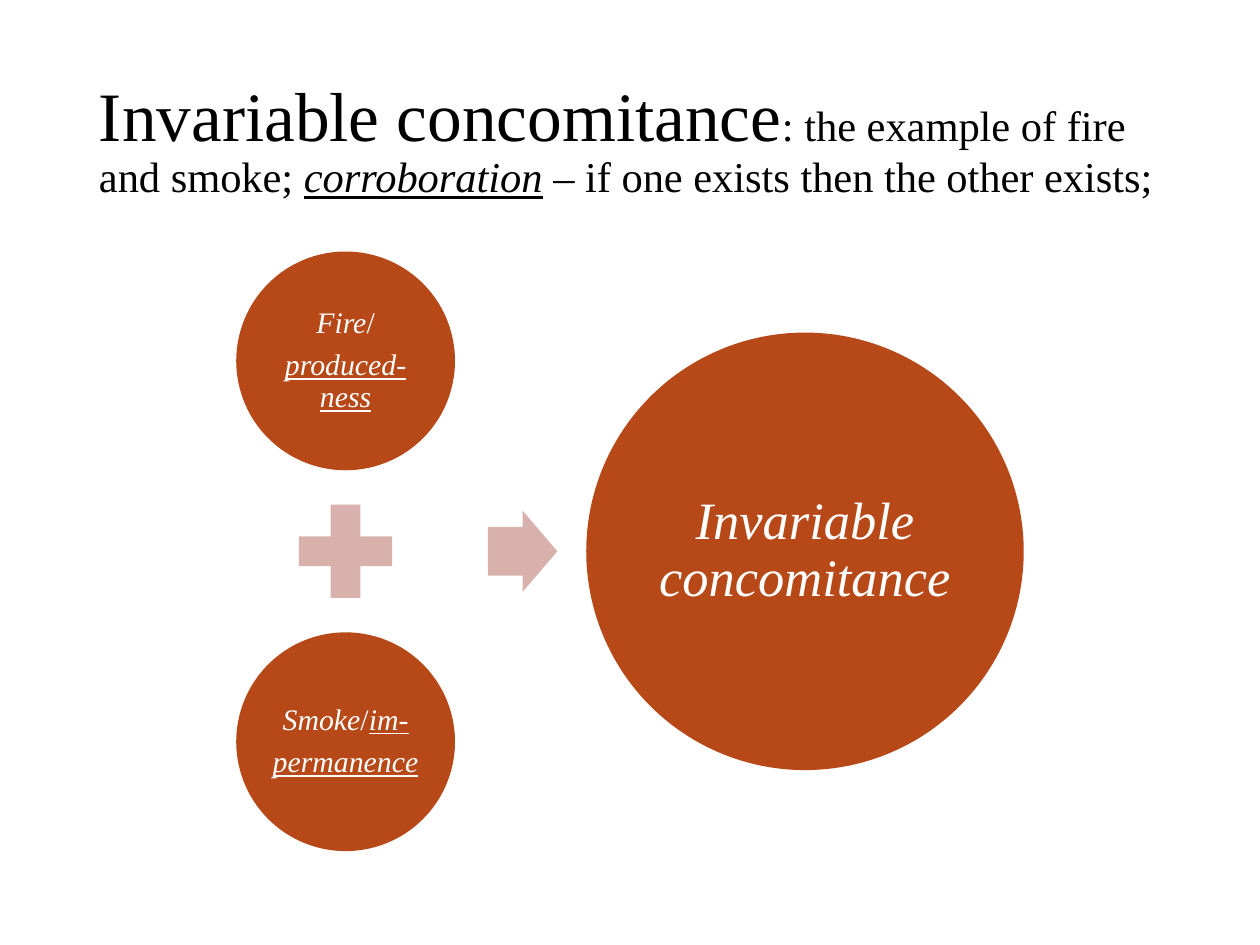
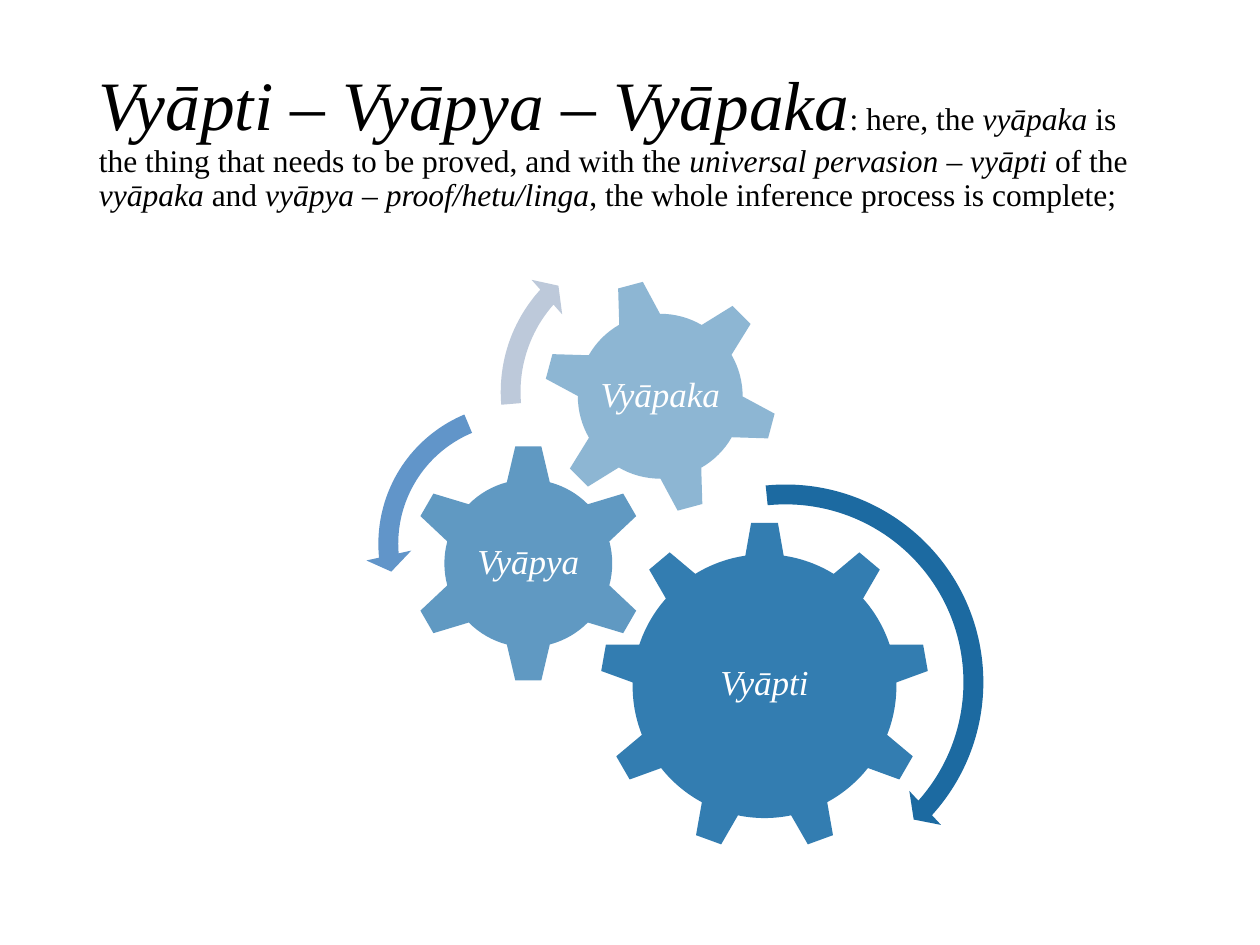
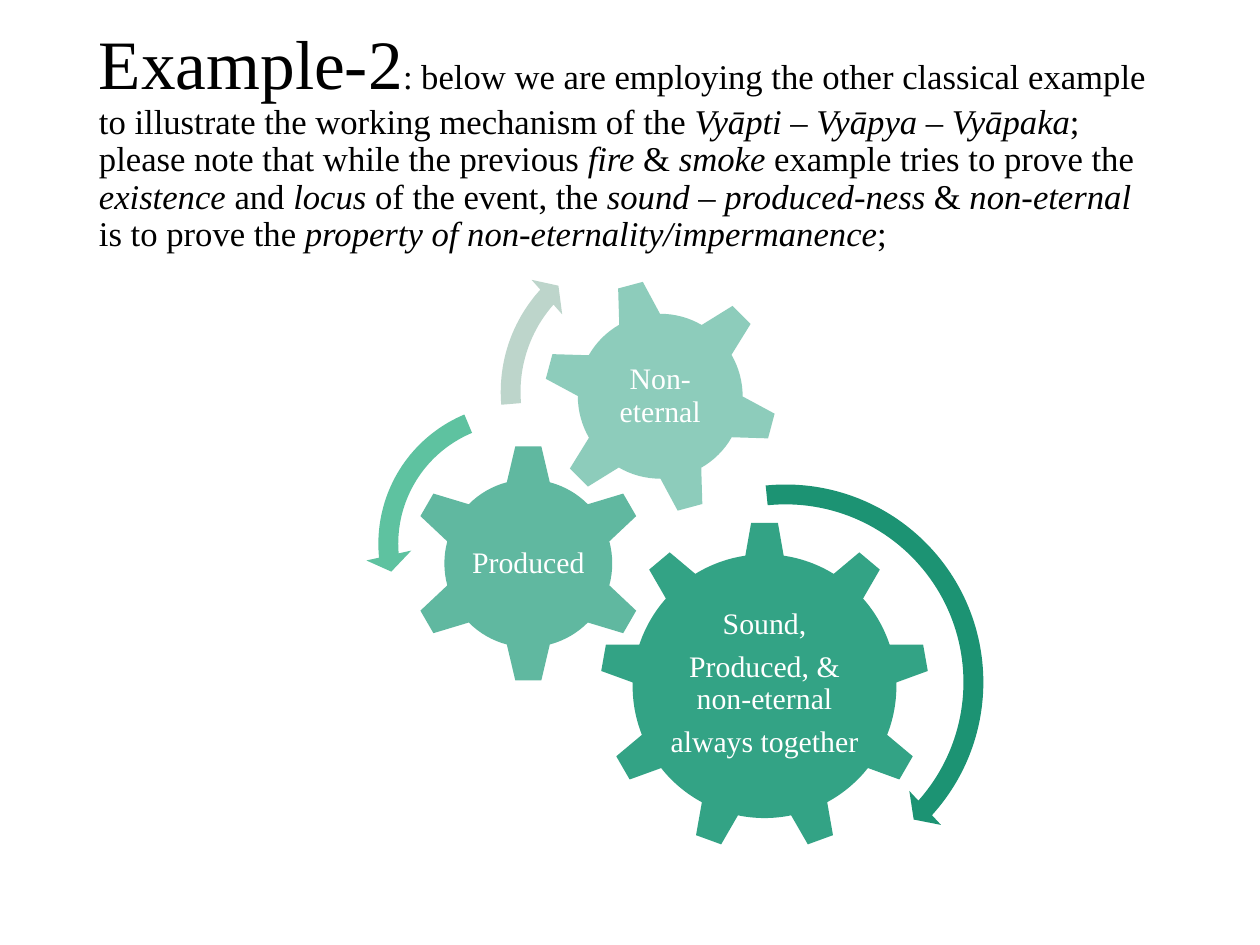
import pptx
import pptx.dml.color
import pptx.enum.shapes
import pptx.enum.text
import pptx.oxml
import pptx.oxml.ns
import pptx.util

Pt = pptx.util.Pt
SHAPE = pptx.enum.shapes.MSO_SHAPE
CENTER = pptx.enum.text.PP_ALIGN.CENTER
LEFT = pptx.enum.text.PP_ALIGN.LEFT

FONT = "Times New Roman"
BLACK, WHITE = "000000", "FFFFFF"
RUST, ROSE = "B74919", "D8B1AC"
TITLE_BOX = (49.5, 28.75, 621, 104.4)
DIAGRAM_BOX = (49.5, 143.75, 621, 342.6)
HEADING_SIZE = 39.6

GEARS = [
    (SHAPE.GEAR_9, 387.4, 248.4, 188.4, 0, 90, 112.3, 97.2, 1.4),
    (SHAPE.GEAR_6, 252.4, 178.2, 137, 0, 70, 68.4, 67.7, 0),
    (SHAPE.GEAR_6, 327.8, 82.7, 134.6, 345, 50, 75.6, 75.6, 0),
]
TURNS = [
    (SHAPE.CIRCULAR_ARROW, 399.4, 246.1, 241.2, (0.047, 2.99, 25.198, 158.534, 0.055)),
    (SHAPE.LEFT_CIRCULAR_ARROW, 246.8, 167, 175, (0.065, 4.3, 104.891, 148.378, 0.075)),
    (SHAPE.CIRCULAR_ARROW, 323.4, 80.2, 188.6, (0.06, 3.941, 133.138, 105.082, 0.07)),
]


def color(value):
    return pptx.dml.color.RGBColor.from_string(value)


def centered(x, y, width, height):
    return x - width / 2, y - height / 2, width, height


def add_marked_runs(para, marked, size, ink):
    """Asterisks enclose italics; underscores enclose underlining."""
    for slant, piece in enumerate(marked.split("*")):
        for line, words in enumerate(piece.split("_")):
            if words:
                span = para.add_run()
                span.text = words
                span.font.name = FONT
                span.font.size = Pt(size)
                span.font.color.rgb = color(ink)
                span.font.italic = slant % 2 == 1
                span.font.underline = line % 2 == 1


def prepare_para(para, align, after=0):
    para.alignment = align
    para.line_spacing = 0.9
    para.space_after = Pt(after)


def write_label(shape, lines, size):
    frame = shape.text_frame
    frame.word_wrap = True
    frame.vertical_anchor = pptx.enum.text.MSO_ANCHOR.MIDDLE
    frame.margin_left = frame.margin_right = Pt(size / 10)
    frame.margin_top = frame.margin_bottom = Pt(size / 10)
    for number, line in enumerate(lines):
        para = frame.add_paragraph() if number else frame.paragraphs[0]
        prepare_para(para, CENTER, size * 0.35)
        add_marked_runs(para, line, size, WHITE)


def add_figure(slide, kind, box, fill, opacity=100):
    figure = slide.shapes.add_shape(kind, *map(Pt, box))
    figure.shadow.inherit = False
    figure.fill.solid()
    figure.fill.fore_color.rgb = color(fill)
    figure.line.fill.background()
    if opacity < 100:
        tint = figure.fill._xPr.find(".//" + pptx.oxml.ns.qn("a:srgbClr"))
        alpha = pptx.oxml.ns.qn("a:alpha")
        tint.append(tint.makeelement(alpha, {"val": str(opacity * 1000)}))
    return figure


def add_title(slide, box, heading, rest, rest_size):
    title = slide.shapes.add_textbox(*map(Pt, box))
    frame = title.text_frame
    frame.word_wrap = True
    frame.vertical_anchor = pptx.enum.text.MSO_ANCHOR.MIDDLE
    para = frame.paragraphs[0]
    prepare_para(para, LEFT)
    add_marked_runs(para, heading, HEADING_SIZE, BLACK)
    add_marked_runs(para, rest, rest_size, BLACK)


def add_sum_diagram(slide, box, terms, result):
    left, top, width, height = box
    small, big, plus = 125, 250, 72.5
    left += (width - 450) / 2
    column = left + small / 2
    middle = top + height / 2
    for term, y in zip(terms, (top + small / 2, top + height - small / 2)):
        circle = add_figure(slide, SHAPE.OVAL, centered(column, y, small, small), RUST)
        write_label(circle, term, 17)
    add_figure(slide, SHAPE.MATH_PLUS, centered(column, middle, plus, plus), ROSE)
    arrow = add_figure(slide, SHAPE.RIGHT_ARROW,
                       (left + small + 18.75, middle - 23.25, 39.75, 46.5), ROSE)
    arrow.adjustments[0] = 0.6
    total = add_figure(slide, SHAPE.OVAL,
                       (left + 450 - big, middle - big / 2, big, big), RUST)
    write_label(total, result, 30)


def add_gear_diagram(slide, box, labels, size, gear_fill, turn_fills):
    left, top = box[:2]
    for gear, lines in zip(GEARS, labels):
        kind, x, y, side, turn, opacity, label_width, label_height, rise = gear
        wheel = add_figure(slide, kind, centered(left + x, top + y, side, side),
                           gear_fill, opacity)
        wheel.rotation = turn
        label_box = centered(left + x, top + y - rise, label_width, label_height)
        write_label(slide.shapes.add_textbox(*map(Pt, label_box)), lines, size)
    for (kind, x, y, side, bends), fill in zip(TURNS, turn_fills):
        arrow = add_figure(slide, kind, centered(left + x, top + y, side, side), fill)
        for number, bend in enumerate(bends):
            arrow.adjustments[number] = bend


def main():
    deck = pptx.Presentation()
    deck.slide_width, deck.slide_height = Pt(720), Pt(540)
    blank = deck.slide_layouts[6]

    slide = deck.slides.add_slide(blank)
    add_title(slide, TITLE_BOX, "Invariable concomitance",
              ": the example of fire and smoke; *_corroboration_*"
              " – if one exists then the other exists;", 24.3)
    add_sum_diagram(slide, DIAGRAM_BOX,
                    [["*Fire*/", "*_produced-ness_*"],
                     ["*Smoke*/*_im-_*", "*_permanence_*"]],
                    ["*Invariable concomitance*"])

    slide = deck.slides.add_slide(blank)
    add_title(slide, TITLE_BOX, "*Vyāpti – Vyāpya – Vyāpaka*",
              ": here, the *vyāpaka* is the thing that needs to be proved, and with the "
              "*universal pervasion* – *vyāpti* of the *vyāpaka *and *vyāpya* – "
              "*proof/hetu/linga*, the whole inference process is complete;", 18)
    add_gear_diagram(slide, DIAGRAM_BOX,
                     [["*Vyāpti*"], ["*Vyāpya*"], ["*Vyāpaka*"]],
                     20, "1D6FA9", ["1C6AA1", "6195C9", "BDC9DA"])

    slide = deck.slides.add_slide(blank)
    add_title(slide, TITLE_BOX, "Example-2",
              ": below we are employing the other classical example to illustrate the "
              "working mechanism of the *Vyāpti – Vyāpya – Vyāpaka*; please note that "
              "while the previous *fire* & *smoke* example tries to prove the *existence* "
              "and *locus* of the event, the *sound – produced-ness* & *non-eternal* is to "
              "prove the *property of non-eternality/impermanence*;", 19.8)
    add_gear_diagram(slide, DIAGRAM_BOX,
                     [["Sound,", "Produced, & non-eternal", "always together"],
                      ["Produced"], ["Non-eternal"]],
                     17, "1D9A78", ["1C9373", "5EC2A0", "BDD5CB"])

    deck.save("out.pptx")


if __name__ == "__main__":
    main()
